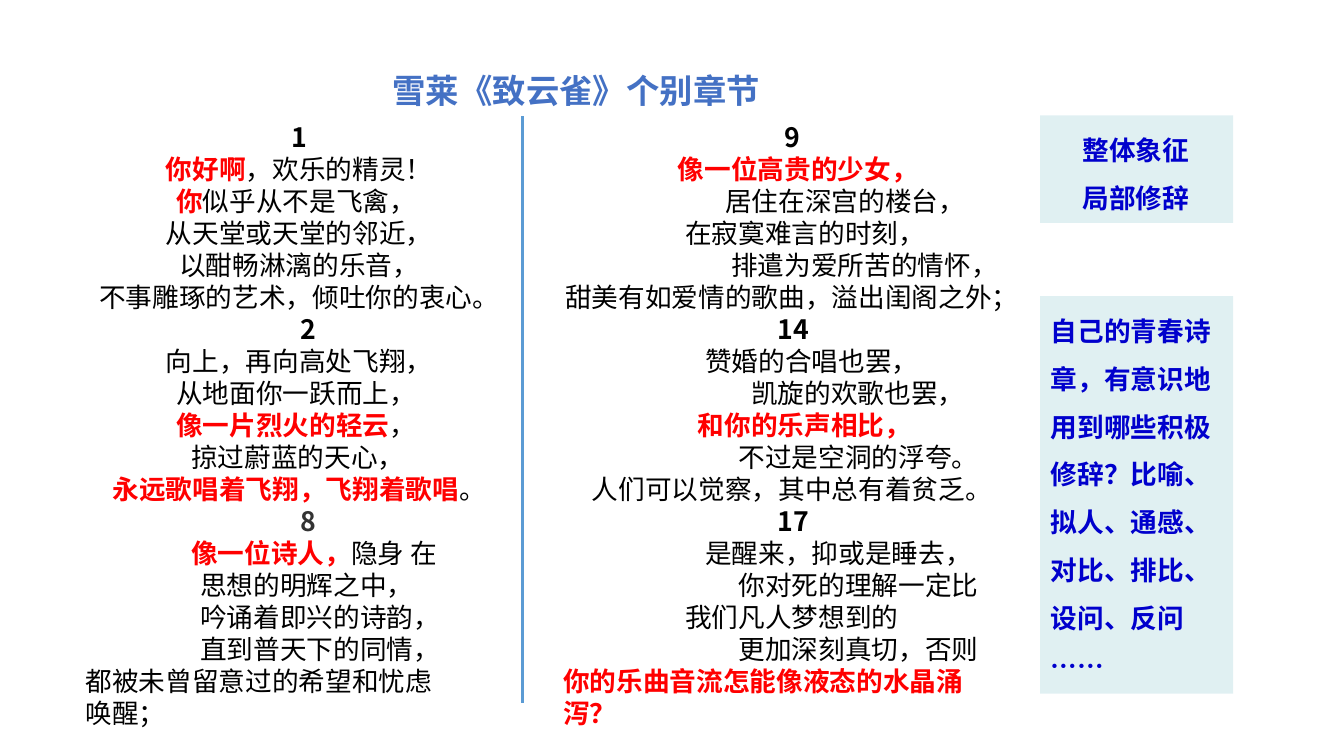
from dataclasses import dataclass

from lxml.etree import SubElement
from pptx import Presentation
from pptx.dml.color import RGBColor
from pptx.enum.shapes import MSO_CONNECTOR, MSO_SHAPE
from pptx.enum.text import MSO_ANCHOR, PP_ALIGN
from pptx.oxml.ns import qn
from pptx.util import Pt


@dataclass(frozen=True)
class Theme:
    """Colours, font and type sizes of the slide."""
    font: str = "Noto Sans CJK SC"
    title_size: float = 22.5
    body_size: float = 18
    verse_pitch: float = 21.6
    note_pitch: float = 32.4
    title: RGBColor = RGBColor(0x44, 0x71, 0xC4)
    text: RGBColor = RGBColor(0, 0, 0)
    soft: RGBColor = RGBColor(0x33, 0x33, 0x33)
    emphasis: RGBColor = RGBColor(0xFF, 0, 0)
    divider: RGBColor = RGBColor(0x5B, 0x9B, 0xD4)
    note: RGBColor = RGBColor(0, 0, 0xCC)
    panel: RGBColor = RGBColor(0x66, 0xB8, 0xC2)
    panel_alpha: int = 20000


THEME = Theme()

LEFT_VERSES = [
    (140, "1", ""),
    (55, "你好啊", "，欢乐的精灵！"),
    (62, "你", "似乎从不是飞禽，"),
    (55, "", "从天堂或天堂的邻近，"),
    (64, "", "以酣畅淋漓的乐音，"),
    (10, "", "不事雕琢的艺术，倾吐你的衷心。"),
    (146, "2", ""),
    (55, "", "向上，再向高处飞翔，"),
    (62, "", "从地面你一跃而上，"),
    (62, "像一片烈火的轻云", "，"),
    (72, "", "掠过蔚蓝的天心，"),
    (19, "永远歌唱着飞翔，飞翔着歌唱", "。"),
    (146, "8", ""),
    (72, "像一位诗人，", "隐身 在"),
    (78, "", "思想的明辉之中，"),
    (78, "", "吟诵着即兴的诗韵，"),
    (78, "", "直到普天下的同情，"),
    (0.7, "", "都被未曾留意过的希望和忧虑"),
    (0.7, "", "唤醒；"),
]
RIGHT_VERSES = [
    (150, "9", ""),
    (78, "像一位高贵的少女，", ""),
    (110, "", "居住在深宫的楼台，"),
    (83, "", "在寂寞难言的时刻，"),
    (114, "", "排遣为爱所苦的情怀，"),
    (2, "", "甜美有如爱情的歌曲，溢出闺阁之外；"),
    (145.5, "14", ""),
    (96.5, "", "赞婚的合唱也罢，"),
    (127.5, "", "凯旋的欢歌也罢，"),
    (91.5, "和你的乐声相比，", ""),
    (119, "", "不过是空洞的浮夸。"),
    (20, "", "人们可以觉察，其中总有着贫乏。"),
    (145.5, "17", ""),
    (96.5, "", "是醒来，抑或是睡去，"),
    (119, "", "你对死的理解一定比"),
    (83, "", "我们凡人梦想到的"),
    (119, "", "更加深刻真切，否则"),
    (0.7, "你的乐曲音流怎能像液态的水晶涌", ""),
    (0.7, "泻？", ""),
]


def format_run(run, size, color, bold):
    """Apply the theme font to a run, for Latin and Chinese text alike."""
    run.font.size = Pt(size)
    run.font.bold = bold
    run.font.color.rgb = color
    run.font.name = THEME.font
    SubElement(run.font._element, qn("a:ea"), typeface=THEME.font)


def prepare_frame(shape, top_inset):
    """Set wrapping and insets and return the text frame."""
    frame = shape.text_frame
    frame.word_wrap = True
    frame.vertical_anchor = MSO_ANCHOR.TOP
    frame.margin_left = frame.margin_right = frame.margin_bottom = 0
    frame.margin_top = Pt(top_inset)
    return frame


def set_lines(frame, lines, indent, pitch, size, color):
    """Fill a frame with bold paragraphs that share one indent."""
    frame.text = "\n".join(lines)
    for paragraph in frame.paragraphs:
        paragraph.alignment = PP_ALIGN.LEFT
        paragraph.line_spacing = Pt(pitch)
        paragraph._p.get_or_add_pPr().set("marL", str(Pt(indent)))
        for run in paragraph.runs:
            format_run(run, size, color, True)


def add_title(slide, left, top, width, height):
    """Place the slide title."""
    shape = slide.shapes.add_textbox(Pt(left), Pt(top), Pt(width), Pt(height))
    set_lines(prepare_frame(shape, 2.6), ["雪莱《致云雀》个别章节"], 0.7,
              THEME.title_size * 1.2, THEME.title_size, THEME.title)


def add_verses(slide, left, top, width, height, verses):
    """Place a column of verses, each with its own indent."""
    shape = slide.shapes.add_textbox(Pt(left), Pt(top), Pt(width), Pt(height))
    frame = prepare_frame(shape, 1.7)
    for index, (indent, strong, plain) in enumerate(verses):
        paragraph = frame.add_paragraph() if index else frame.paragraphs[0]
        paragraph.line_spacing = Pt(THEME.verse_pitch)
        paragraph._p.get_or_add_pPr().set("marL", str(Pt(indent)))
        strong_color = THEME.emphasis
        if strong.isdigit():
            strong_color = THEME.soft if strong == "8" else THEME.text
        for text, color, bold in ((strong, strong_color, True),
                                  (plain, THEME.text, False)):
            if text:
                run = paragraph.add_run()
                run.text = text
                format_run(run, THEME.body_size, color, bold)


def add_divider(slide, left, top, height):
    """Draw the vertical line between the columns."""
    line = slide.shapes.add_connector(
        MSO_CONNECTOR.STRAIGHT, Pt(left), Pt(top), Pt(left), Pt(top + height))
    line.line.color.rgb = THEME.divider
    line.line.width = Pt(2.25)
    SubElement(line._element.spPr, qn("a:effectLst"))


def add_note(slide, left, top, width, height, lines, indent):
    """Place a tinted panel with bold notes."""
    shape = slide.shapes.add_shape(
        MSO_SHAPE.RECTANGLE, Pt(left), Pt(top), Pt(width), Pt(height))
    shape.shadow.inherit = False
    shape.line.fill.background()
    shape.fill.solid()
    shape.fill.fore_color.rgb = THEME.panel
    color = shape._element.spPr.find(qn("a:solidFill"))[0]
    SubElement(color, qn("a:alpha"), val=str(THEME.panel_alpha))
    set_lines(prepare_frame(shape, 1.5), lines, indent, THEME.note_pitch,
              THEME.body_size, THEME.note)


def build_poem_slide(presentation):
    """Lay out the title, two verse columns and the side notes."""
    slide = presentation.slides.add_slide(presentation.slide_layouts[6])
    add_verses(slide, 57, 80, 290, 391, LEFT_VERSES)
    add_verses(slide, 379.5, 80, 316, 391, RIGHT_VERSES)
    add_divider(slide, 352.5, 78.5, 396.5)
    add_title(slide, 264.2, 44.6, 253, 29.5)
    add_note(slide, 702, 78, 130.3, 72.5, ["整体象征", "局部修辞"], 28.8)
    add_note(slide, 702, 200, 130.3, 268.5, [
        "自己的青春诗章，有意识地用到哪些积极修辞？"
        "比喻、拟人、通感、对比、排比、设问、反问", "……"], 7.2)


def main():
    """Build and save the presentation."""
    presentation = Presentation()
    presentation.slide_width = Pt(907.2)
    presentation.slide_height = Pt(510.5)
    build_poem_slide(presentation)
    presentation.save("out.pptx")


if __name__ == "__main__":
    main()
